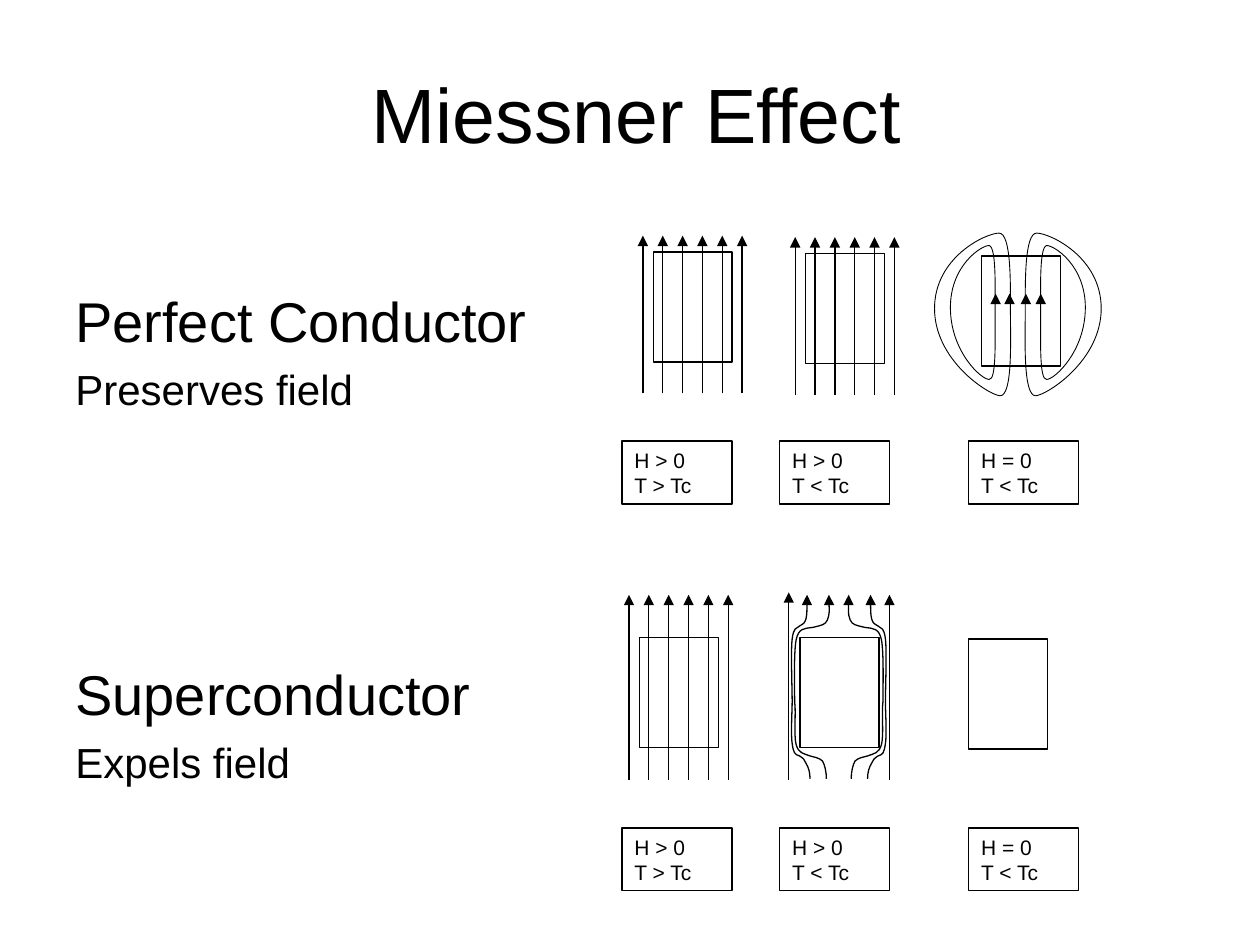
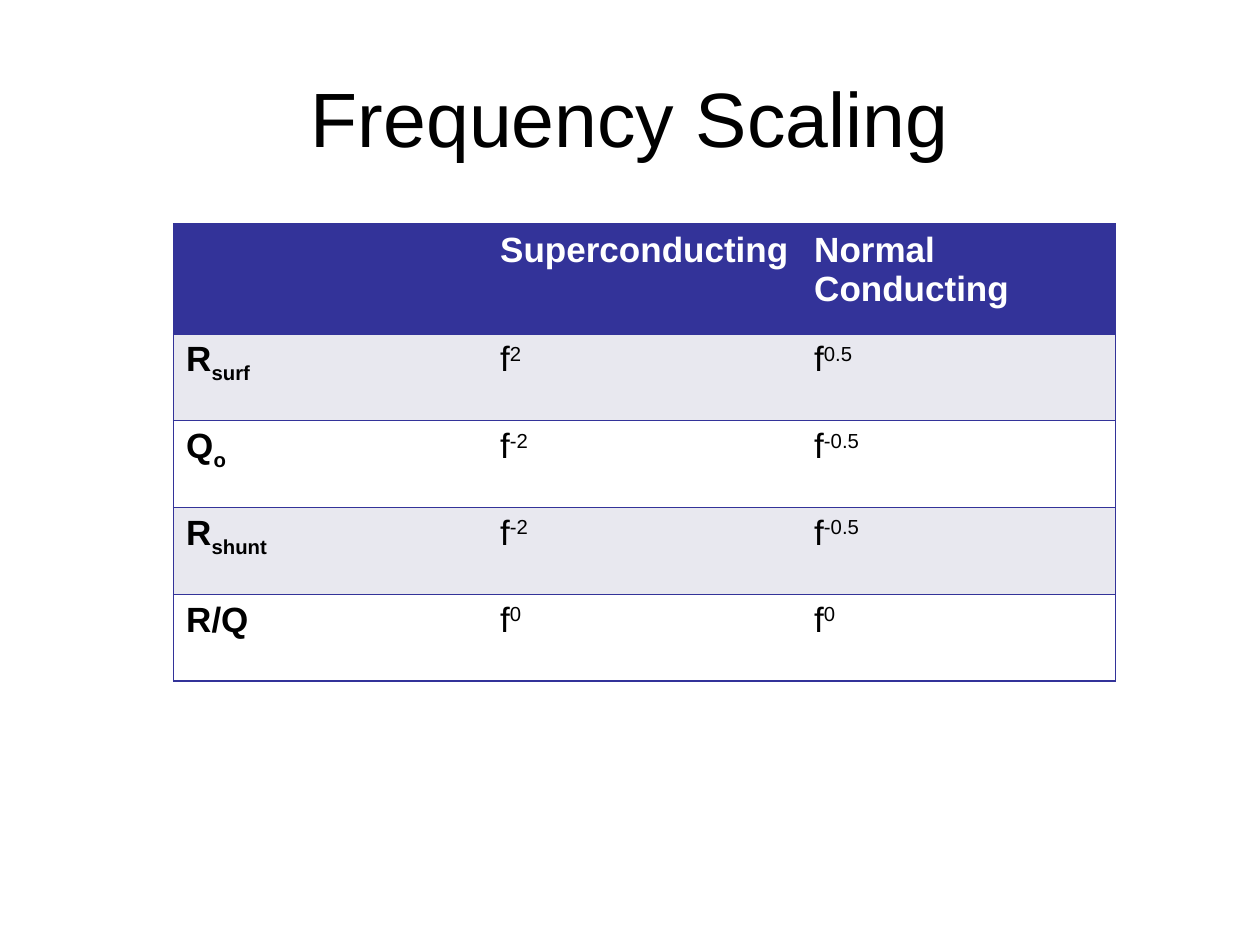
from lxml import etree
from pptx import Presentation
from pptx import util as u
from pptx.dml.color import RGBColor
from pptx.enum import shapes, text
from pptx.oxml.ns import qn

BLACK = RGBColor(0, 0, 0)
WHITE = RGBColor(255, 255, 255)
NAVY = RGBColor(0x33, 0x33, 0x99)
BAND = RGBColor(0xE8, 0xE8, 0xEF)
FONT = "Arial"

# Content: all positions and sizes are in centimetres
MATERIALS = [
    ("Perfect Conductor", "Preserves field", 5.66),
    ("Superconductor", "Expels field", 13.17),
]
STATES = [
    (12.54, ("H > 0", "T > Tc")),
    (15.72, ("H > 0", "T < Tc")),
    (19.53, ("H = 0", "T < Tc")),
]
LABEL_TOPS = (8.89, 16.69)
LABEL_SIZE = (2.22, 1.27)
SAMPLE_SIZE = (1.59, 2.22)

# Straight field through a sample: first line, bottom, tip, sample top
UNIFORM_FIELDS = [
    (12.96, 7.93, 4.75, 5.08),
    (16.03, 7.96, 4.78, 5.11),
    (12.68, 15.72, 11.99, 12.85),
]
LINE_COUNT, LINE_STEP, SAMPLE_INSET = 6, 0.4, 0.21

# Curves: a start, then three Bezier points per segment.
# Each x is the distance from a vertical axis of symmetry.
EXPELLED_AXIS = 16.91
ENTERING_CURVES = [
    [(0.58, 15.7), (0.58, 15.57), (0.61, 15.47), (0.66, 15.39),
     (0.69, 15.32), (0.71, 15.29), (0.79, 15.24),
     (0.89, 15.21), (0.91, 15.19), (0.94, 14.99),
     (0.97, 14.81), (0.94, 14.33), (0.94, 14.15)],
    [(0.25, 15.7), (0.25, 15.57), (0.28, 15.42), (0.33, 15.34),
     (0.41, 15.27), (0.48, 15.27), (0.58, 15.24),
     (0.71, 15.19), (0.81, 15.19), (0.86, 15.01),
     (0.91, 14.83), (0.86, 14.35), (0.89, 14.15)],
]
LEAVING_CURVES = [
    [(0.64, 11.99), (0.64, 12.12), (0.64, 12.37), (0.66, 12.47),
     (0.69, 12.57), (0.71, 12.57), (0.79, 12.62),
     (0.86, 12.67), (0.91, 12.65), (0.94, 12.88),
     (0.97, 13.13), (0.94, 13.87), (0.94, 14.15)],
    [(0.2, 11.99), (0.2, 12.14), (0.18, 12.37), (0.23, 12.5),
     (0.28, 12.6), (0.33, 12.6), (0.53, 12.65),
     (0.71, 12.67), (0.81, 12.67), (0.86, 12.9),
     (0.91, 13.16), (0.89, 13.89), (0.89, 14.15)],
]
TRAPPED_AXIS = 20.52
TRAPPED_LOOPS = [
    [(0.58, 7.65), (0.74, 7.65), (1.35, 7.09), (1.36, 6.22),
     (1.37, 5.36), (0.74, 4.95), (0.58, 4.95),
     (0.43, 4.98), (0.46, 5.84), (0.46, 6.32),
     (0.46, 6.83), (0.43, 7.67), (0.58, 7.65)],
    [(0.36, 7.98), (0.61, 7.95), (1.68, 7.26), (1.68, 6.22),
     (1.68, 5.18), (0.64, 4.7), (0.38, 4.7),
     (0.13, 4.7), (0.15, 5.74), (0.15, 6.27),
     (0.15, 6.83), (0.1, 7.98), (0.36, 7.98)],
]
TRAPPED_ARROWS = (20.07, 20.35, 20.68, 20.98)

# Table cells: (base, subscript or superscript)
HEADERS = ["", "Superconducting", "Normal Conducting"]
SCALING = [
    [("R", "surf"), ("f", "2"), ("f", "0.5")],
    [("Q", "o"), ("f", "-2"), ("f", "-0.5")],
    [("R", "shunt"), ("f", "-2"), ("f", "-0.5")],
    [("R/Q", ""), ("f", "0"), ("f", "0")],
]


# Text
def add_span(para, words, size, color=BLACK, bold=False, baseline=0):
    span = para.add_run()
    span.text = words
    span.font.name, span.font.size = FONT, u.Pt(size)
    span.font.color.rgb, span.font.bold = color, bold
    if baseline:
        span.font._element.set("baseline", str(baseline * 1000))


def add_page(deck, title, left, top):
    page = deck.slides.add_slide(deck.slide_layouts[5])
    box = page.shapes.title
    box.left, box.top = u.Cm(left), u.Cm(top)
    box.width, box.height = u.Cm(22.86), u.Cm(3.18)
    frame = box.text_frame
    frame.auto_size = text.MSO_AUTO_SIZE.NONE
    frame.vertical_anchor = text.MSO_ANCHOR.MIDDLE
    para = frame.paragraphs[0]
    para.alignment = text.PP_ALIGN.CENTER
    add_span(para, title, 44)
    return page


def add_material(page, name, effect, top):
    box = page.shapes.add_textbox(u.Cm(1.27), u.Cm(top), u.Cm(10.44), u.Cm(2.8))
    frame = box.text_frame
    frame.word_wrap = True
    add_span(frame.paragraphs[0], name, 32)
    para = frame.add_paragraph()
    para.space_before = u.Pt(5.5)
    add_span(para, effect, 24)


# Outlines
def set_line(shape, width=0.75, arrow_end=None):
    shape.line.color.rgb = BLACK
    shape.line.width = u.Pt(width)
    if arrow_end:
        line = shape._element.spPr.find(qn("a:ln"))
        etree.SubElement(line, qn("a:" + arrow_end), type="triangle")


def add_rect(page, left, top, size):
    rect = page.shapes.add_shape(
        shapes.MSO_SHAPE.RECTANGLE, *(u.Cm(v) for v in (left, top, *size)))
    rect.shadow.inherit = False
    rect.fill.solid()
    rect.fill.fore_color.rgb = WHITE
    set_line(rect)
    return rect


def add_label(page, left, top, lines):
    frame = add_rect(page, left, top, LABEL_SIZE).text_frame
    frame.vertical_anchor = text.MSO_ANCHOR.TOP
    for i, words in enumerate(lines):
        para = frame.add_paragraph() if i else frame.paragraphs[0]
        para.alignment = text.PP_ALIGN.LEFT
        add_span(para, words, 12)


def add_arrow(page, x, bottom, tip):
    arrow = page.shapes.add_connector(
        shapes.MSO_CONNECTOR.STRAIGHT, u.Cm(x), u.Cm(bottom), u.Cm(x), u.Cm(tip))
    set_line(arrow, arrow_end="tailEnd")
    etree.SubElement(arrow._element.spPr, qn("a:effectLst"))


def add_curve(page, points, width=0.75, arrow_end=None):
    start, *rest = [(u.Cm(x), u.Cm(y)) for x, y in points]
    builder = page.shapes.build_freeform(*start)
    builder.add_line_segments(rest, close=points[0] == points[-1])
    curve = builder.convert_to_shape()
    # Join every three points into one Bezier segment
    steps = list(curve._element.iter(qn("a:lnTo")))
    for i in range(0, len(steps), 3):
        bezier = etree.Element(qn("a:cubicBezTo"))
        steps[i].addprevious(bezier)
        for step in steps[i:i + 3]:
            bezier.append(step[0])
            step.getparent().remove(step)
    curve.shadow.inherit = False
    curve.fill.background()
    set_line(curve, width, arrow_end)


def add_mirrored(page, axis, curves, **style):
    for side in (-1, 1):
        for points in curves:
            add_curve(page, [(axis + side * x, y) for x, y in points], **style)


def add_uniform_field(page, first, bottom, tip, sample_top):
    add_rect(page, first + SAMPLE_INSET, sample_top, SAMPLE_SIZE)
    for i in range(LINE_COUNT):
        add_arrow(page, first + i * LINE_STEP, bottom, tip)


# Table
def set_borders(cell, sides):
    props = cell._tc.get_or_add_tcPr()
    for side in "LRTB":
        line = etree.SubElement(props, qn("a:ln" + side), w=str(u.Pt(1)))
        if side in sides:
            fill = etree.SubElement(line, qn("a:solidFill"))
            etree.SubElement(fill, qn("a:srgbClr"), val=str(NAVY))
        else:
            etree.SubElement(line, qn("a:noFill"))


def add_scaling_table(page):
    rows, cols = len(SCALING) + 1, len(HEADERS)
    heights = [2.21] + [1.75] * len(SCALING)
    table = page.shapes.add_table(
        rows, cols, u.Cm(3.5), u.Cm(4.52), u.Cm(19), u.Cm(sum(heights))).table
    for column in table.columns:
        column.width = u.Cm(6.33)
    for r, height in enumerate(heights):
        table.rows[r].height = u.Cm(height)
        for c in range(cols):
            cell = table.cell(r, c)
            sides = "TB" + ("L" if c == 0 else "R" if c == cols - 1 else "")
            set_borders(cell, sides)
            cell.fill.solid()
            cell.fill.fore_color.rgb = NAVY if r == 0 else BAND if r % 2 else WHITE
            para = cell.text_frame.paragraphs[0]
            if r == 0:
                if HEADERS[c]:
                    add_span(para, HEADERS[c], 20, WHITE, bold=True)
                continue
            base, script = SCALING[r - 1][c]
            add_span(para, base, 20, bold=c == 0)
            if script:
                add_span(para, script, 20, bold=c == 0, baseline=30 if c else -25)


def build_effect_page(deck):
    page = add_page(deck, "Miessner Effect", 1.4, 0.69)
    for material in MATERIALS:
        add_material(page, *material)
    for top in LABEL_TOPS:
        for left, lines in STATES:
            add_label(page, left, top, lines)
    for field in UNIFORM_FIELDS:
        add_uniform_field(page, *field)

    # Field trapped in the perfect conductor
    add_rect(page, 19.79, 5.16, SAMPLE_SIZE)
    add_mirrored(page, TRAPPED_AXIS, TRAPPED_LOOPS, width=0.5)
    for x in TRAPPED_ARROWS:
        add_arrow(page, x, 6.12, 5.92)

    # Field expelled from the superconductor, then switched off
    add_rect(page, 16.13, 12.85, SAMPLE_SIZE)
    for x, tip in ((15.9, 11.94), (17.93, 11.99)):
        add_arrow(page, x, 15.72, tip)
    add_mirrored(page, EXPELLED_AXIS, ENTERING_CURVES)
    add_mirrored(page, EXPELLED_AXIS, LEAVING_CURVES, arrow_end="headEnd")
    add_rect(page, 19.53, 12.88, SAMPLE_SIZE)


def main():
    deck = Presentation()
    deck.slide_width, deck.slide_height = u.Cm(25.4), u.Cm(19.05)
    build_effect_page(deck)
    add_scaling_table(add_page(deck, "Frequency Scaling", 1.27, 0.76))
    deck.save("out.pptx")


if __name__ == "__main__":
    main()
